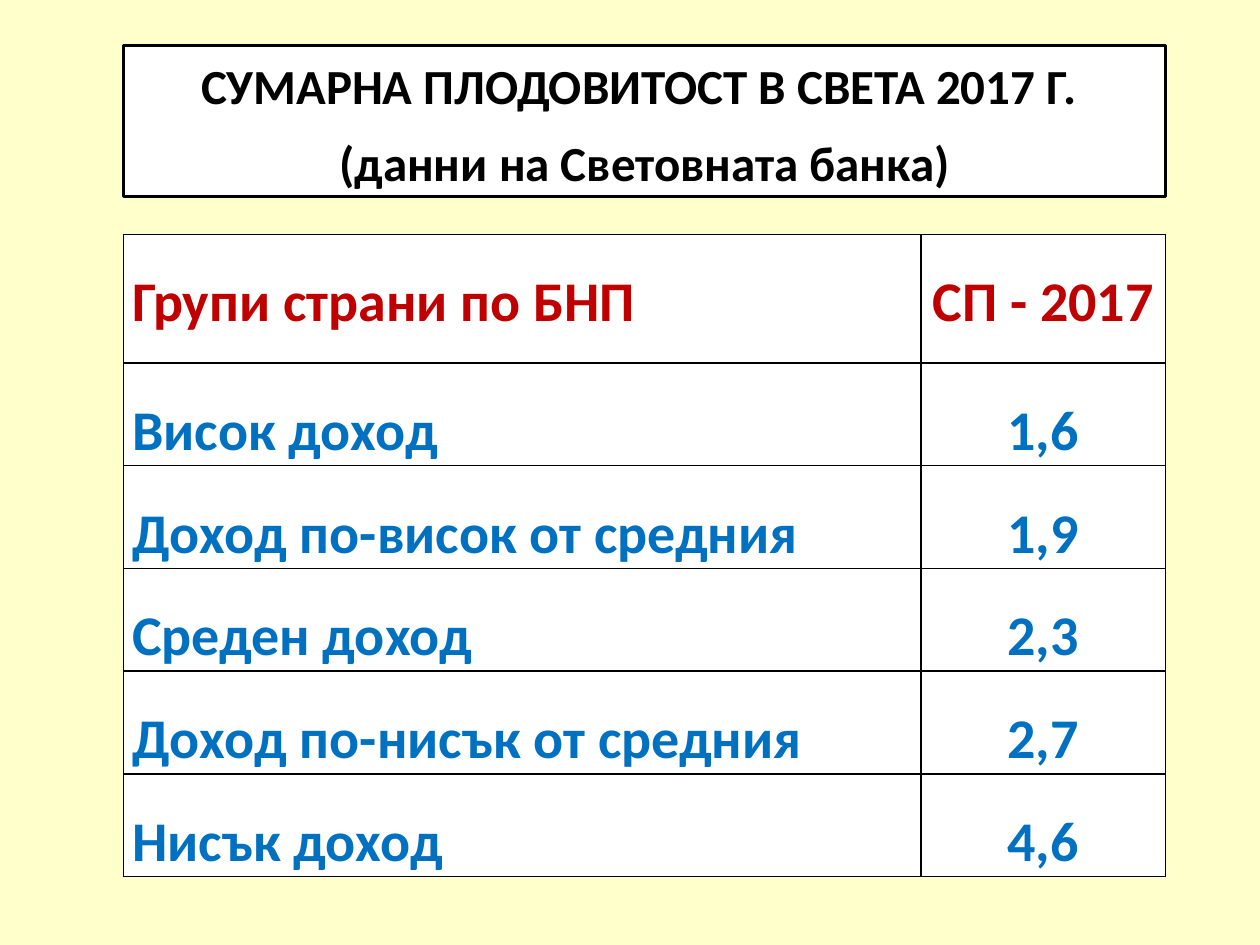
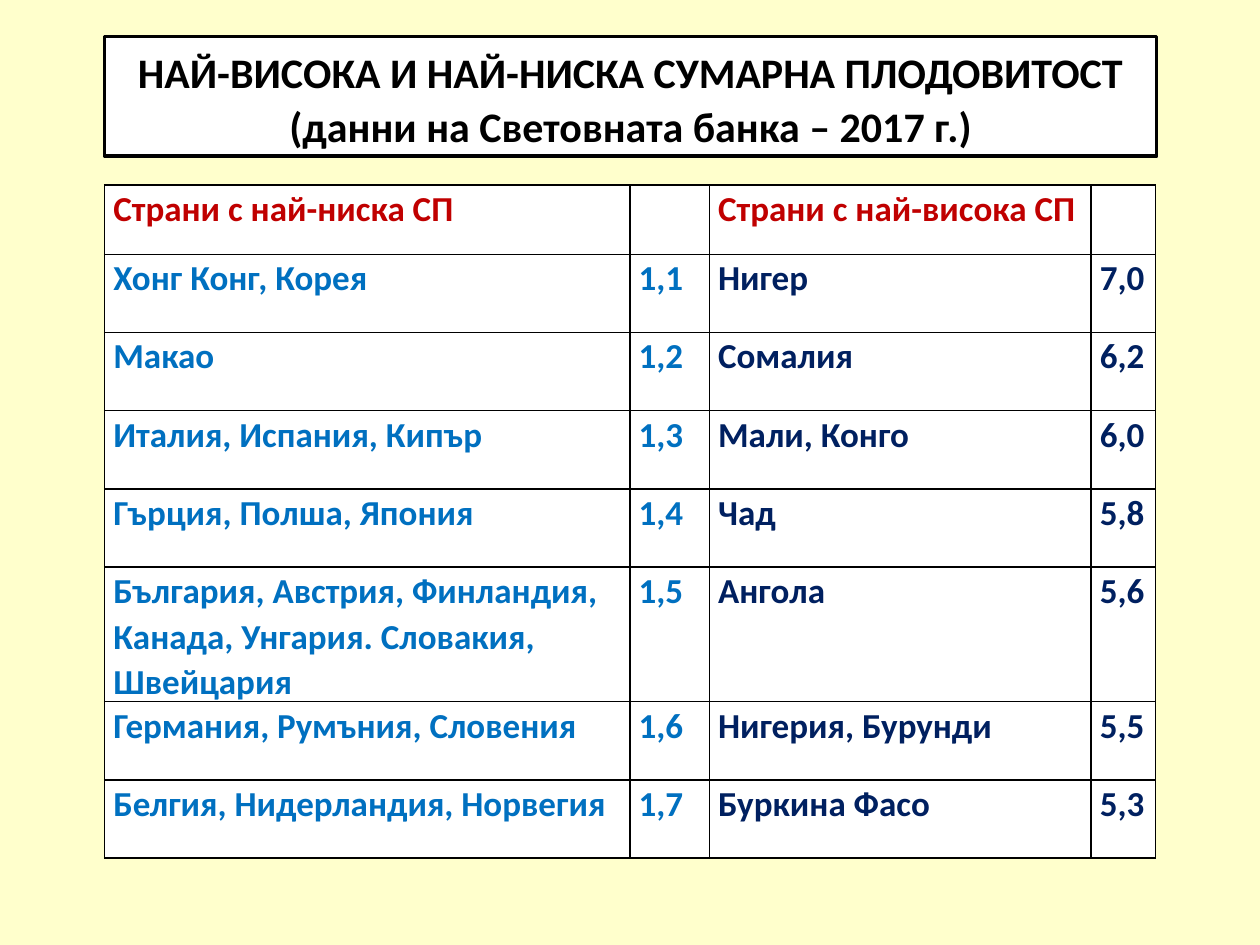
from dataclasses import dataclass

from lxml import etree
from pptx import Presentation
from pptx import util as u
from pptx.dml.color import RGBColor
from pptx.enum import shapes, text
from pptx.oxml import ns

LEFT, CENTER = text.PP_ALIGN.LEFT, text.PP_ALIGN.CENTER


@dataclass(frozen=True)
class Theme:
    font: str = "Calibri"
    background: str = "FFFFCC"
    panel: str = "FFFFFF"
    ink: str = "000000"
    header: str = "C00000"
    blue: str = "0070C0"
    navy: str = "002060"
    title_large: int = 28
    title_small: int = 24
    table_large: int = 32
    table_small: int = 20
    title_line: int = 2
    cell_line: int = 1
    spacing: float = 1.07
    space_after: int = 8


THEME = Theme()


@dataclass(frozen=True)
class TitleLine:
    words: str
    space_after: int = THEME.space_after


@dataclass(frozen=True)
class TitleBox:
    top: float
    height: float
    size: int
    lines: tuple[TitleLine, ...]


@dataclass(frozen=True)
class Column:
    width: float
    color: str
    align: text.PP_ALIGN = LEFT


@dataclass(frozen=True)
class DataTable:
    top: float
    size: int
    spacing: float
    header_height: float
    row_height: float
    columns: tuple[Column, ...]
    rows: tuple[tuple[str, ...], ...]


@dataclass(frozen=True)
class PageContent:
    left: float
    width: float
    title: TitleBox
    table: DataTable


PAGES = (
    # Fertility by income group
    PageContent(
        0.98, 8.27,
        TitleBox(0.36, 1.2, THEME.title_large, (
            TitleLine("СУМАРНА ПЛОДОВИТОСТ В СВЕТА 2017 Г. "),
            TitleLine("(данни на Световната банка)"),
        )),
        DataTable(
            1.86, THEME.table_large, 1.5, 1.02, 0.73,
            (Column(6.33, THEME.blue), Column(1.94, THEME.blue, CENTER)),
            (
                ("Групи страни по БНП", "СП - 2017"),
                ("Висок доход", "1,6"),
                ("Доход по-висок от средния", "1,9"),
                ("Среден доход", "2,3"),
                ("Доход по-нисък от средния", "2,7"),
                ("Нисък доход", "4,6"),
            ),
        ),
    ),
    # Countries with the lowest and highest fertility
    PageContent(
        0.83, 8.35,
        TitleBox(0.29, 0.95, THEME.title_small, (
            TitleLine("НАЙ-ВИСОКА И НАЙ-НИСКА СУМАРНА ПЛОДОВИТОСТ", 0),
            TitleLine("(данни на Световната банка – 2017 г.)"),
        )),
        DataTable(
            1.47, THEME.table_small, THEME.spacing, 0.55, 0.62,
            (Column(4.17, THEME.blue), Column(0.63, THEME.blue),
             Column(3.03, THEME.navy), Column(0.51, THEME.navy)),
            (
                ("Страни с най-ниска СП", "", "Страни с най-висока СП", ""),
                ("Хонг Конг, Корея", "1,1", "Нигер", "7,0"),
                ("Макао", "1,2", "Сомалия", "6,2"),
                ("Италия, Испания, Кипър", "1,3", "Мали, Конго", "6,0"),
                ("Гърция, Полша, Япония", "1,4", "Чад", "5,8"),
                ("България, Австрия, Финландия, Канада, Унгария. Словакия, Швейцария",
                 "1,5", "Ангола", "5,6"),
                ("Германия, Румъния, Словения", "1,6", "Нигерия, Бурунди", "5,5"),
                ("Белгия, Нидерландия, Норвегия", "1,7", "Буркина Фасо", "5,3"),
            ),
        ),
    ),
)


def apply(target, values: dict) -> None:
    for name, value in values.items():
        setattr(target, name, value)


def paint(fill, color: str) -> None:
    fill.solid()
    fill.fore_color.rgb = RGBColor.from_string(color)


def write(para, words: str, size: int, color: str, layout: dict) -> None:
    apply(para, layout)
    if words:
        span = para.add_run()
        span.text = words
        apply(span.font, {"name": THEME.font, "size": u.Pt(size), "bold": True})
        span.font.color.rgb = RGBColor.from_string(color)


def add_borders(cell) -> None:
    properties = cell._tc.get_or_add_tcPr()
    for side in ("lnL", "lnR", "lnT", "lnB"):
        line = etree.SubElement(properties, ns.qn(f"a:{side}"), w=str(u.Pt(THEME.cell_line)))
        fill = etree.SubElement(line, ns.qn("a:solidFill"))
        etree.SubElement(fill, ns.qn("a:srgbClr"), val=THEME.ink)


def add_title(page, content: PageContent) -> None:
    title = content.title
    box = page.shapes.add_shape(
        shapes.MSO_SHAPE.RECTANGLE, u.Inches(content.left), u.Inches(title.top),
        u.Inches(content.width), u.Inches(title.height))
    box.shadow.inherit = False
    paint(box.fill, THEME.panel)
    paint(box.line.fill, THEME.ink)
    box.line.width = u.Pt(THEME.title_line)
    frame = box.text_frame
    apply(frame, {"word_wrap": True, "vertical_anchor": text.MSO_ANCHOR.TOP,
                  "auto_size": text.MSO_AUTO_SIZE.SHAPE_TO_FIT_TEXT})
    for index, line in enumerate(title.lines):
        para = frame.add_paragraph() if index else frame.paragraphs[0]
        write(para, line.words, title.size, THEME.ink, {
            "alignment": CENTER, "line_spacing": THEME.spacing,
            "space_after": u.Pt(line.space_after)})


def add_data_table(page, content: PageContent) -> None:
    data = content.table
    height = data.header_height + data.row_height * (len(data.rows) - 1)
    table = page.shapes.add_table(
        len(data.rows), len(data.columns), u.Inches(content.left), u.Inches(data.top),
        u.Inches(content.width), u.Inches(height)).table
    apply(table, {"first_row": False, "horz_banding": False})
    for index, column in enumerate(data.columns):
        table.columns[index].width = u.Inches(column.width)
    for row_index, row in enumerate(data.rows):
        is_header = row_index == 0
        table.rows[row_index].height = u.Inches(
            data.header_height if is_header else data.row_height)
        for column_index, (column, words) in enumerate(zip(data.columns, row)):
            cell = table.cell(row_index, column_index)
            apply(cell, {"margin_left": u.Inches(0.07), "margin_right": u.Inches(0.07),
                         "margin_top": 0, "margin_bottom": 0})
            add_borders(cell)
            paint(cell.fill, THEME.panel)
            write(cell.text_frame.paragraphs[0], words, data.size,
                  THEME.header if is_header else column.color,
                  {"alignment": column.align, "line_spacing": data.spacing})


def main() -> None:
    deck = Presentation()
    apply(deck, {"slide_width": u.Inches(10), "slide_height": u.Inches(7.5)})
    for content in PAGES:
        page = deck.slides.add_slide(deck.slide_layouts[6])
        paint(page.background.fill, THEME.background)
        add_data_table(page, content)
        add_title(page, content)
    deck.save("out.pptx")


if __name__ == "__main__":
    main()
